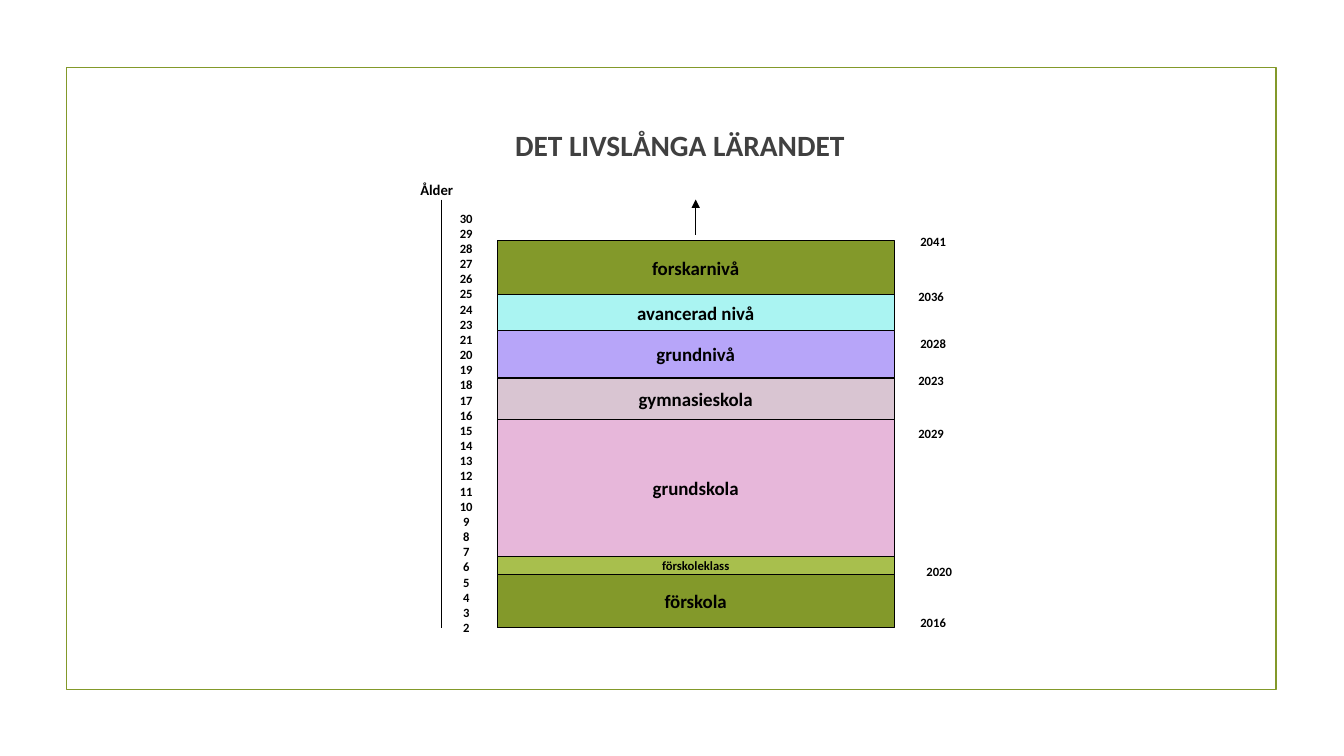
from dataclasses import dataclass

from lxml import etree
from pptx import Presentation
from pptx.dml.color import RGBColor
from pptx.enum.shapes import MSO_CONNECTOR, MSO_SHAPE
from pptx.enum.text import MSO_ANCHOR, MSO_AUTO_SIZE, PP_ALIGN
from pptx.oxml.ns import qn
from pptx.util import Inches, Pt

RECT = MSO_SHAPE.RECTANGLE
STRAIGHT = MSO_CONNECTOR.STRAIGHT
MIDDLE = MSO_ANCHOR.MIDDLE
GROW = MSO_AUTO_SIZE.SHAPE_TO_FIT_TEXT
LEFT, CENTER = PP_ALIGN.LEFT, PP_ALIGN.CENTER

FONT = "Calibri"
BLACK = "000000"
GREY = "404040"
OLIVE = "83992A"

STACK_LEFT, STACK_WIDTH, STACK_BOTTOM = 4.93, 3.94, 6.23
AXIS_X, AXIS_TOP = 4.38, 1.98
ARROW_X = 6.9


@dataclass
class Level:
    name: str
    height: float
    fill: str
    size: float = 13.5


@dataclass
class Year:
    text: str
    left: float
    top: float


# From the bottom of the stack upwards
LEVELS = [
    Level("förskola", 0.53, OLIVE),
    Level("förskoleklass", 0.18, "A8BF4D", 9),
    Level("grundskola", 1.36, "E7B7DA"),
    Level("gymnasieskola", 0.41, "D9C5D2"),
    Level("grundnivå", 0.47, "B7A5F9"),
    Level("avancerad nivå", 0.36, "AAF4F2"),
    Level("forskarnivå", 0.53, OLIVE),
]

YEARS = [
    Year("2016", 9.03, 6.05),
    Year("2020", 9.09, 5.54),
    Year("2029", 9.01, 4.18),
    Year("2023", 9.01, 3.65),
    Year("2028", 9.03, 3.28),
    Year("2036", 9.01, 2.82),
    Year("2041", 9.03, 2.27),
]

AGES = [str(age) for age in range(30, 1, -1) if age != 22]


def rgb(color: str) -> RGBColor:
    return RGBColor.from_string(color)


def set_text(tf, text: str, size: float, color: str, align) -> None:
    tf.word_wrap = False
    tf.text = text
    for p in tf.paragraphs:
        p.alignment = align
        for r in p.runs:
            r.font.name = FONT
            r.font.size = Pt(size)
            r.font.bold = True
            r.font.color.rgb = rgb(color)


def add_text(s, text: str, left: float, top: float, width: float, height: float,
             size: float, color: str = BLACK, align=LEFT) -> None:
    sp = s.shapes.add_textbox(Inches(left), Inches(top), Inches(width), Inches(height))
    set_text(sp.text_frame, text, size, color, align)
    sp.text_frame.auto_size = GROW


def add_rect(s, left: float, top: float, width: float, height: float,
             line: str, line_width: float):
    sp = s.shapes.add_shape(RECT, Inches(left), Inches(top), Inches(width), Inches(height))
    sp.shadow.inherit = False
    sp.line.color.rgb = rgb(line)
    sp.line.width = Pt(line_width)
    return sp


def add_level(s, level: Level, top: float) -> None:
    sp = add_rect(s, STACK_LEFT, top, STACK_WIDTH, level.height, BLACK, 0.75)
    sp.fill.solid()
    sp.fill.fore_color.rgb = rgb(level.fill)
    tf = sp.text_frame
    tf.vertical_anchor = MIDDLE
    set_text(tf, level.name, level.size, BLACK, CENTER)


def add_vertical(s, x: float, start: float, end: float, arrow: bool = False) -> None:
    line = s.shapes.add_connector(STRAIGHT, Inches(x), Inches(start), Inches(x), Inches(end))
    line.line.color.rgb = rgb(BLACK)
    line.line.width = Pt(0.75)
    if arrow:
        etree.SubElement(line.line._get_or_add_ln(), qn("a:tailEnd"), type="triangle")
    etree.SubElement(line._element.spPr, qn("a:effectLst"))


def main() -> None:
    prs = Presentation()
    prs.slide_width, prs.slide_height = Inches(13.33), Inches(7.5)
    s = prs.slides.add_slide(prs.slide_layouts[6])

    frame = add_rect(s, 0.66, 0.67, 12, 6.17, OLIVE, 1.25)
    frame.fill.background()

    add_text(s, "DET LIVSLÅNGA LÄRANDET", 5.01, 1.21, 3.51, 0.45, 21, GREY)

    add_vertical(s, AXIS_X, AXIS_TOP, STACK_BOTTOM)
    add_text(s, "Ålder", 4.07, 1.74, 0.53, 0.28, 10.5)
    add_text(s, "\n".join(AGES), 4.46, 2.04, 0.33, 4.34, 9, align=CENTER)

    top = STACK_BOTTOM
    for level in LEVELS:
        top -= level.height
        add_level(s, level, top)
    add_vertical(s, ARROW_X, 2.33, AXIS_TOP, arrow=True)

    for year in YEARS:
        add_text(s, year.text, year.left, year.top, 0.45, 0.25, 9)

    prs.save("out.pptx")


if __name__ == "__main__":
    main()
